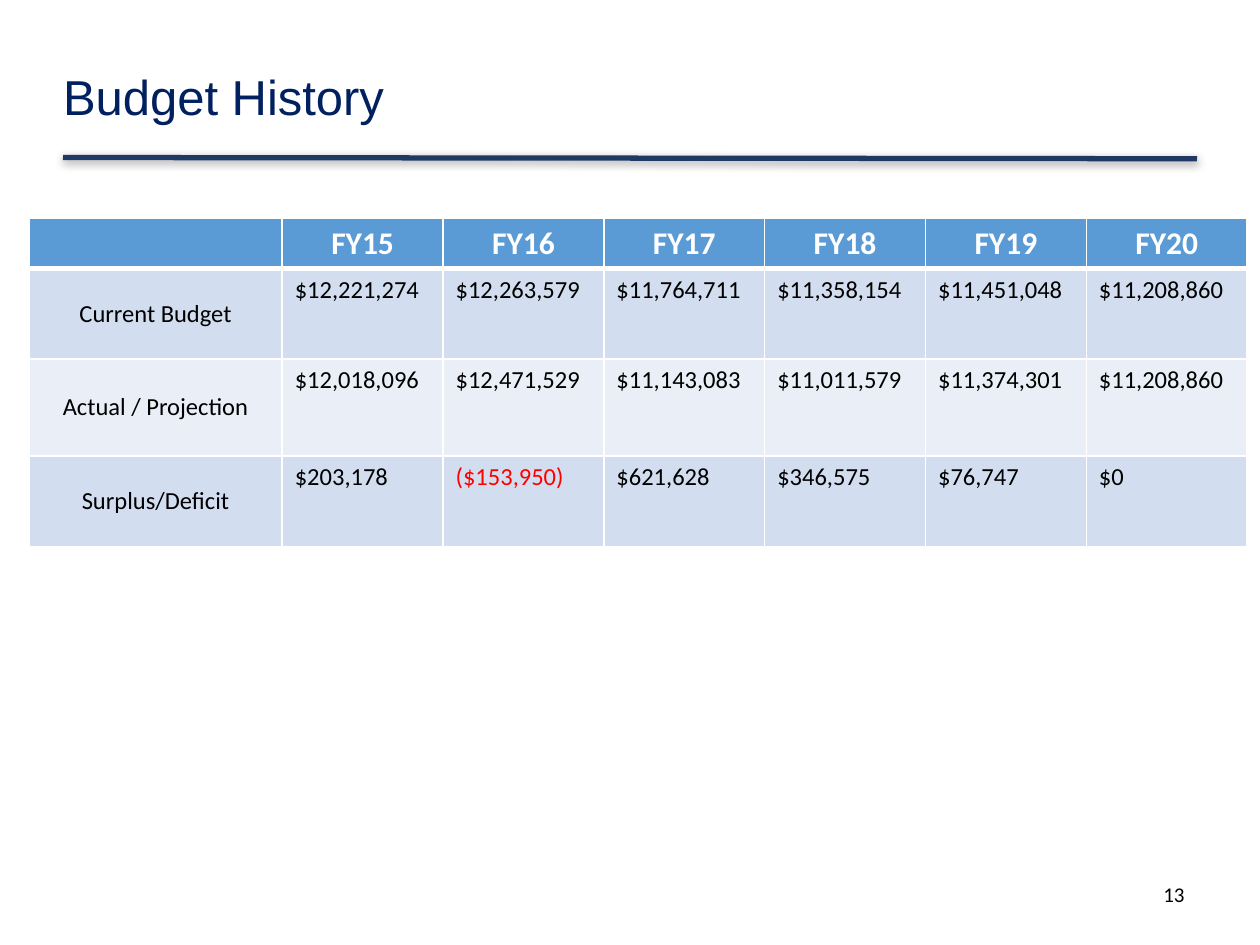
from lxml import etree
from pptx import Presentation
from pptx.dml.color import RGBColor
from pptx.enum.shapes import MSO_CONNECTOR
from pptx.enum.text import MSO_ANCHOR, PP_ALIGN
from pptx.oxml import parse_xml
from pptx.oxml.ns import nsdecls, qn
from pptx.util import Inches, Pt

STRAIGHT = MSO_CONNECTOR.STRAIGHT
TOP, MIDDLE = MSO_ANCHOR.TOP, MSO_ANCHOR.MIDDLE
LEFT, CENTER, RIGHT = PP_ALIGN.LEFT, PP_ALIGN.CENTER, PP_ALIGN.RIGHT

TITLE = "Budget History"
PAGE_NUMBER = "13"
YEARS = ["", "FY15", "FY16", "FY17", "FY18", "FY19", "FY20"]
BUDGET = [
    ["Current Budget", "$12,221,274", "$12,263,579", "$11,764,711",
     "$11,358,154", "$11,451,048", "$11,208,860"],
    ["Actual / Projection", "$12,018,096", "$12,471,529", "$11,143,083",
     "$11,011,579", "$11,374,301", "$11,208,860"],
    ["Surplus/Deficit", "$203,178", "($153,950)", "$621,628",
     "$346,575", "$76,747", "$0"],
]

THEME = {
    "title_font": "Arial", "body_font": "Calibri",
    "title_size": 28, "header_size": 18, "body_size": 14, "number_size": 12,
    "title": "002060", "rule": "203864", "text": "000000", "deficit": "FF0000",
    "header_text": "FFFFFF", "header_fill": "5B9BD5",
    "bands": ["D2DEEF", "EAEFF7"], "border": "FFFFFF",
}

TABLE_LEFT, TABLE_TOP, TABLE_WIDTH = 0.23, 1.73, 9.67
LABEL_WIDTH = 2.01
ROW_HEIGHTS = [0.38, 0.72, 0.77, 0.72]


def write(frame, text, size, color, font=THEME["body_font"], bold=False,
          align=LEFT, spacing=None):
    para = frame.paragraphs[0]
    para.alignment = align
    para.line_spacing = spacing
    span = para.add_run()
    span.text = text
    span.font.name = font
    span.font.size = Pt(size)
    span.font.bold = bold
    span.font.color.rgb = RGBColor.from_string(color)


def set_borders(cell, bottom, top):
    properties = cell._tc.get_or_add_tcPr()
    widths = {"lnL": 1, "lnR": 1, "lnT": top, "lnB": bottom}
    for position, (side, width) in enumerate(widths.items()):
        properties.insert(position, parse_xml(
            f'<a:{side} {nsdecls("a")} w="{Pt(width)}"><a:solidFill>'
            f'<a:srgbClr val="{THEME["border"]}"/></a:solidFill></a:{side}>'))


def add_title(page):
    title = page.shapes.title
    title.left, title.top = Inches(0.5), Inches(0.33)
    title.width, title.height = Inches(6.86), Inches(0.92)
    frame = title.text_frame
    frame.margin_left = frame.margin_right = 0
    frame.margin_top = frame.margin_bottom = 0
    frame.vertical_anchor = MIDDLE
    write(frame, TITLE, THEME["title_size"], THEME["title"],
          font=THEME["title_font"], spacing=0.9)


def add_rule(page):
    rule = page.shapes.add_connector(
        STRAIGHT, Inches(0.5), Inches(1.25), Inches(9.5), Inches(1.26))
    rule.line.width = Pt(3)
    rule.line.color.rgb = RGBColor.from_string(THEME["rule"])
    effects = etree.SubElement(rule._element.spPr, qn("a:effectLst"))
    shadow = etree.SubElement(
        effects, qn("a:outerShdw"), blurRad=str(Pt(5)), dist=str(Pt(1.6)),
        dir="5400000", rotWithShape="0")
    color = etree.SubElement(shadow, qn("a:srgbClr"), val="000000")
    etree.SubElement(color, qn("a:alpha"), val="38000")


def add_budget_table(page):
    rows = [YEARS] + BUDGET
    table = page.shapes.add_table(
        len(rows), len(YEARS), Inches(TABLE_LEFT), Inches(TABLE_TOP),
        Inches(TABLE_WIDTH), Inches(sum(ROW_HEIGHTS))).table
    year_width = (TABLE_WIDTH - LABEL_WIDTH) / (len(YEARS) - 1)
    for index, column in enumerate(table.columns):
        column.width = Inches(year_width if index else LABEL_WIDTH)
    for index, (values, height) in enumerate(zip(rows, ROW_HEIGHTS)):
        table.rows[index].height = Inches(height)
        header = index == 0
        fill = THEME["header_fill"] if header else THEME["bands"][(index - 1) % 2]
        for place, text in enumerate(values):
            cell = table.cell(index, place)
            centered = header or place == 0
            cell.vertical_anchor = MIDDLE if centered else TOP
            cell.fill.solid()
            cell.fill.fore_color.rgb = RGBColor.from_string(fill)
            set_borders(cell, bottom=3 if header else 1, top=3 if index == 1 else 1)
            color = THEME["deficit" if text.startswith("(") else "text"]
            write(cell.text_frame, text,
                  THEME["header_size" if header else "body_size"],
                  THEME["header_text"] if header else color,
                  bold=header, align=CENTER if centered else LEFT)


def add_page_number(page):
    box = page.shapes.add_textbox(
        Inches(7.17), Inches(6.95), Inches(2.33), Inches(0.4))
    box.text_frame.word_wrap = True
    write(box.text_frame, PAGE_NUMBER, THEME["number_size"], THEME["text"],
          align=RIGHT)


def main():
    deck = Presentation()
    deck.slide_width, deck.slide_height = Inches(10), Inches(7.5)
    page = deck.slides.add_slide(deck.slide_layouts.get_by_name("Title Only"))
    add_rule(page)
    add_title(page)
    add_page_number(page)
    add_budget_table(page)
    deck.save("out.pptx")


if __name__ == "__main__":
    main()
